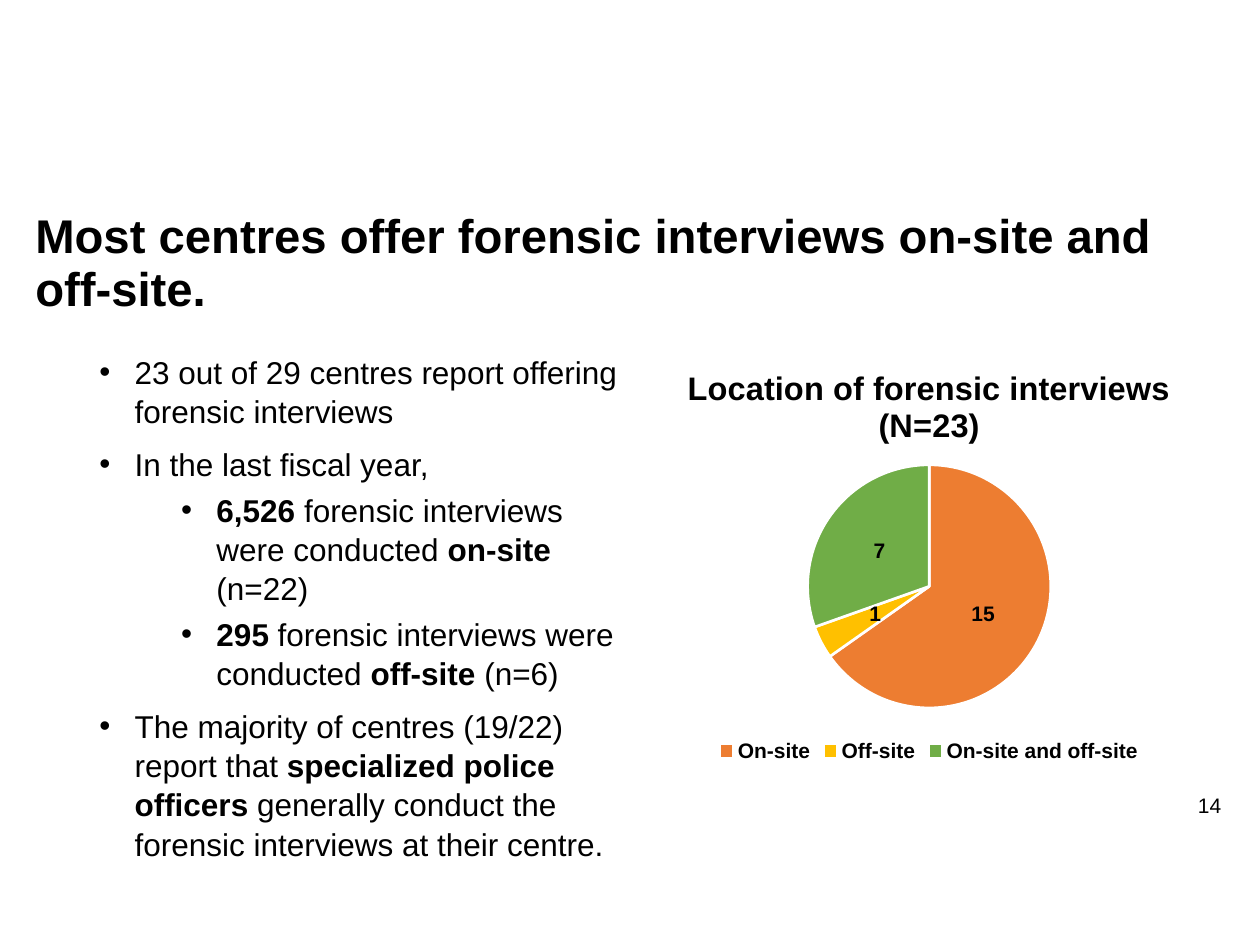
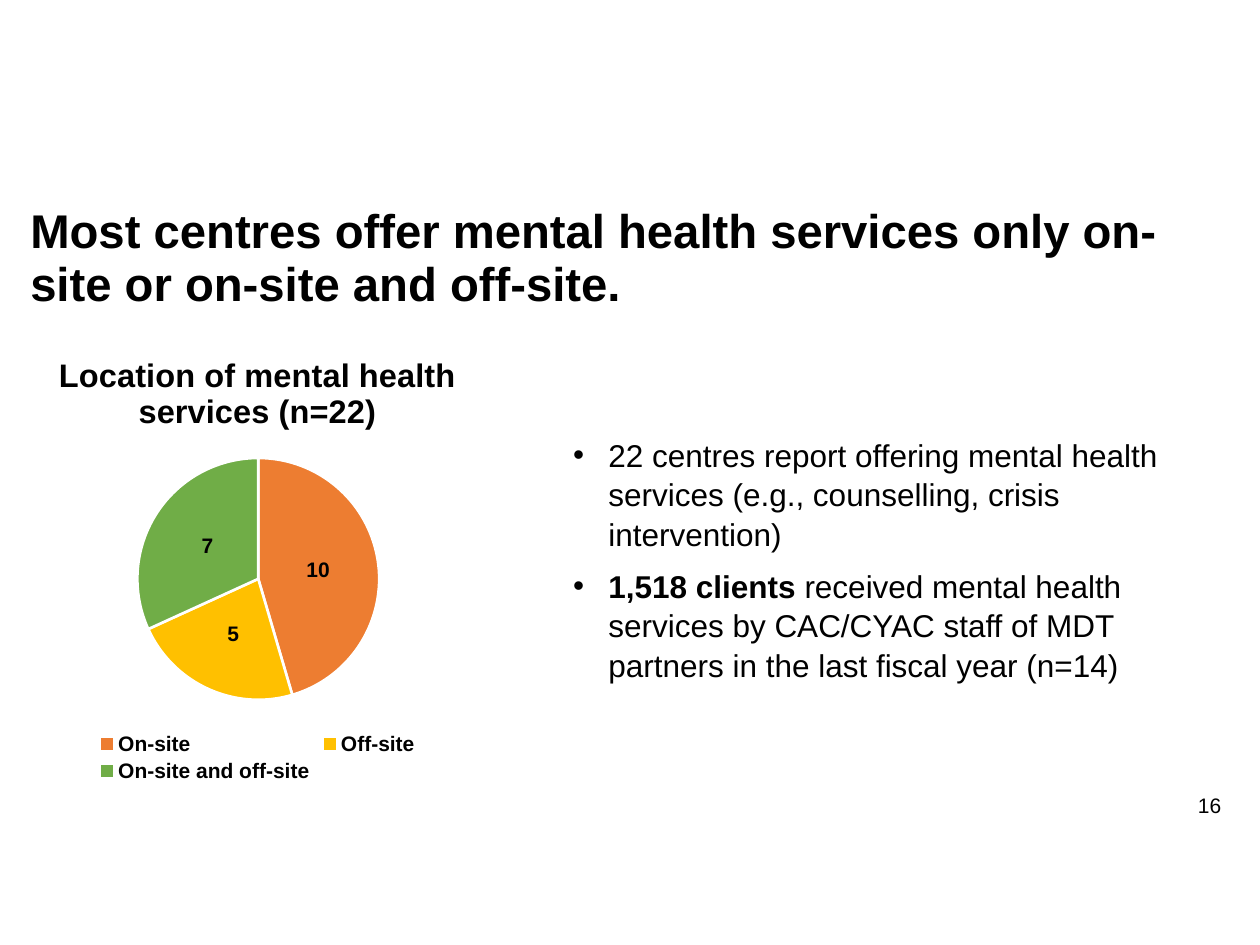
from lxml import etree
from pptx import Presentation
from pptx.chart.data import CategoryChartData
from pptx.dml.color import RGBColor
from pptx.enum.chart import XL_CHART_TYPE, XL_LABEL_POSITION, XL_LEGEND_POSITION
from pptx.enum.text import MSO_ANCHOR, MSO_AUTO_SIZE, PP_ALIGN
from pptx.oxml.ns import qn
from pptx.util import Inches, Pt

PIE = XL_CHART_TYPE.PIE
CENTER = XL_LABEL_POSITION.CENTER
BOTTOM = XL_LEGEND_POSITION.BOTTOM
TOP = MSO_ANCHOR.TOP
NO_FIT = MSO_AUTO_SIZE.NONE
LEFT = PP_ALIGN.LEFT

FONT = "Arial"
BLACK = RGBColor(0x00, 0x00, 0x00)
WHITE = RGBColor(0xFF, 0xFF, 0xFF)
ORANGE = RGBColor(0xED, 0x7D, 0x31)
GOLD = RGBColor(0xFF, 0xC0, 0x00)
GREEN = RGBColor(0x70, 0xAD, 0x47)

LOCATIONS = [("On-site", ORANGE), ("Off-site", GOLD), ("On-site and off-site", GREEN)]
LEVELS = [(0.28, 7.5), (0.93, 3.8)]
HANGING = 0.28
TITLE_SPACING = 0.94
BODY_SPACING = 1.04
PAGE_BOX = (9.41, 6.24, 0.4, 0.49)

SLIDES = [
    {
        "title": "Most centres offer forensic interviews on-site and off-site.",
        "title_box": (0.18, 1.62, 9.46, 0.81),
        "body_box": (0.69, 2.74, 4.43, 3.88),
        "bullets": [
            (0, [("23 out of 29 centres report offering forensic interviews", False)]),
            (0, [("In the last fiscal year,", False)]),
            (1, [("6,526", True), (" forensic interviews were conducted ", False),
                 ("on-site ", True), ("(n=22)", False)]),
            (1, [("295", True), (" forensic interviews were conducted ", False),
                 ("off-site ", True), ("(n=6)", False)]),
            (0, [("The majority of centres (19/22) report that ", False),
                 ("specialized police officers ", True),
                 ("generally conduct the forensic interviews at their centre.", False)]),
        ],
        "chart_title": "Location of forensic interviews (N=23)",
        "chart_box": (4.61, 2.74, 5.53, 3.35),
        "pie_box": (6.41, 3.68, 1.93, 1.95),
        "values": (15, 1, 7),
        "page": "14",
    },
    {
        "title": "Most centres offer mental health services only on-site or on-site and off-site.",
        "title_box": (0.14, 1.58, 9.66, 0.6),
        "body_box": (4.45, 3.4, 5.15, 2.07),
        "bullets": [
            (0, [("22 centres report offering mental health services "
                  "(e.g., counselling, crisis intervention)", False)]),
            (0, [("1,518 clients ", True),
                 ("received mental health services by CAC/CYAC staff of MDT "
                  "partners in the last fiscal year (n=14)", False)]),
        ],
        "chart_title": "Location of mental health services (n=22)",
        "chart_box": (-0.61, 2.63, 5.31, 3.62),
        "pie_box": (1.09, 3.63, 1.92, 1.93),
        "values": (10, 5, 7),
        "page": "16",
    },
]


def inches(box):
    return [Inches(v) for v in box]


def style(font, size, bold=False):
    font.name = FONT
    font.size = Pt(size)
    font.bold = bold
    font.color.rgb = BLACK


def prepare(tf):
    tf.word_wrap = True
    tf.auto_size = NO_FIT
    tf.vertical_anchor = TOP
    return tf


def add_title(s, text, box):
    sp = s.shapes.title
    sp.left, sp.top, sp.width, sp.height = inches(box)
    tf = prepare(sp.text_frame)
    tf.text = text
    p = tf.paragraphs[0]
    p.alignment = LEFT
    p.line_spacing = TITLE_SPACING
    style(p.runs[0].font, 27, True)


def add_bullets(s, bullets, box):
    tf = prepare(s.shapes.add_textbox(*inches(box)).text_frame)
    for i, (level, runs) in enumerate(bullets):
        p = tf.add_paragraph() if i else tf.paragraphs[0]
        margin, before = LEVELS[level]
        p.level = level
        p.line_spacing = BODY_SPACING
        p.space_before = Pt(before if i else 0)
        pPr = p._p.get_or_add_pPr()
        pPr.set("marL", str(Inches(margin)))
        pPr.set("indent", str(-Inches(HANGING)))
        etree.SubElement(pPr, qn("a:buFont")).set("typeface", FONT)
        etree.SubElement(pPr, qn("a:buChar")).set("char", "•")
        for text, bold in runs:
            r = p.add_run()
            r.text = text
            style(r.font, 18, bold)


def place_pie(chart, chart_box, pie_box):
    plot_area = chart._chartSpace.chart.plotArea
    for old in plot_area.findall(qn("c:layout")):
        plot_area.remove(old)
    layout = etree.Element(qn("c:layout"))
    plot_area.insert(0, layout)
    manual = etree.SubElement(layout, qn("c:manualLayout"))
    left, top, width, height = chart_box
    x, y, w, h = pie_box
    settings = [("layoutTarget", "inner"), ("xMode", "edge"), ("yMode", "edge"),
                ("x", (x - left) / width), ("y", (y - top) / height),
                ("w", w / width), ("h", h / height)]
    for tag, value in settings:
        etree.SubElement(manual, qn("c:" + tag)).set("val", str(value))


def add_pie(s, title, values, chart_box, pie_box):
    data = CategoryChartData()
    data.categories = [name for name, _ in LOCATIONS]
    data.add_series("Series 1", values)
    chart = s.shapes.add_chart(PIE, *inches(chart_box), data).chart
    style(chart.font, 10)

    chart.has_title = True
    tf = chart.chart_title.text_frame
    tf.text = title
    style(tf.paragraphs[0].runs[0].font, 18.6, True)
    chart.chart_title.include_in_layout = False

    chart.has_legend = True
    chart.legend.position = BOTTOM
    chart.legend.include_in_layout = False
    style(chart.legend.font, 12, True)

    plot = chart.plots[0]
    plot.vary_by_categories = True
    plot.has_data_labels = True
    labels = plot.data_labels
    labels.show_value = True
    labels.show_percentage = False
    labels.position = CENTER
    style(labels.font, 12, True)
    for i, (_, color) in enumerate(LOCATIONS):
        fmt = plot.series[0].points[i].format
        fmt.fill.solid()
        fmt.fill.fore_color.rgb = color
        fmt.line.color.rgb = WHITE
        fmt.line.width = Pt(1.5)
    place_pie(chart, chart_box, pie_box)


def add_page_number(s, number):
    tf = prepare(s.shapes.add_textbox(*inches(PAGE_BOX)).text_frame)
    tf.text = number
    style(tf.paragraphs[0].runs[0].font, 12)


def main():
    prs = Presentation()
    prs.slide_width, prs.slide_height = Inches(10), Inches(7.5)
    for c in SLIDES:
        s = prs.slides.add_slide(prs.slide_layouts[5])
        add_title(s, c["title"], c["title_box"])
        add_bullets(s, c["bullets"], c["body_box"])
        add_page_number(s, c["page"])
        add_pie(s, c["chart_title"], c["values"], c["chart_box"], c["pie_box"])
    prs.save("out.pptx")


if __name__ == "__main__":
    main()
